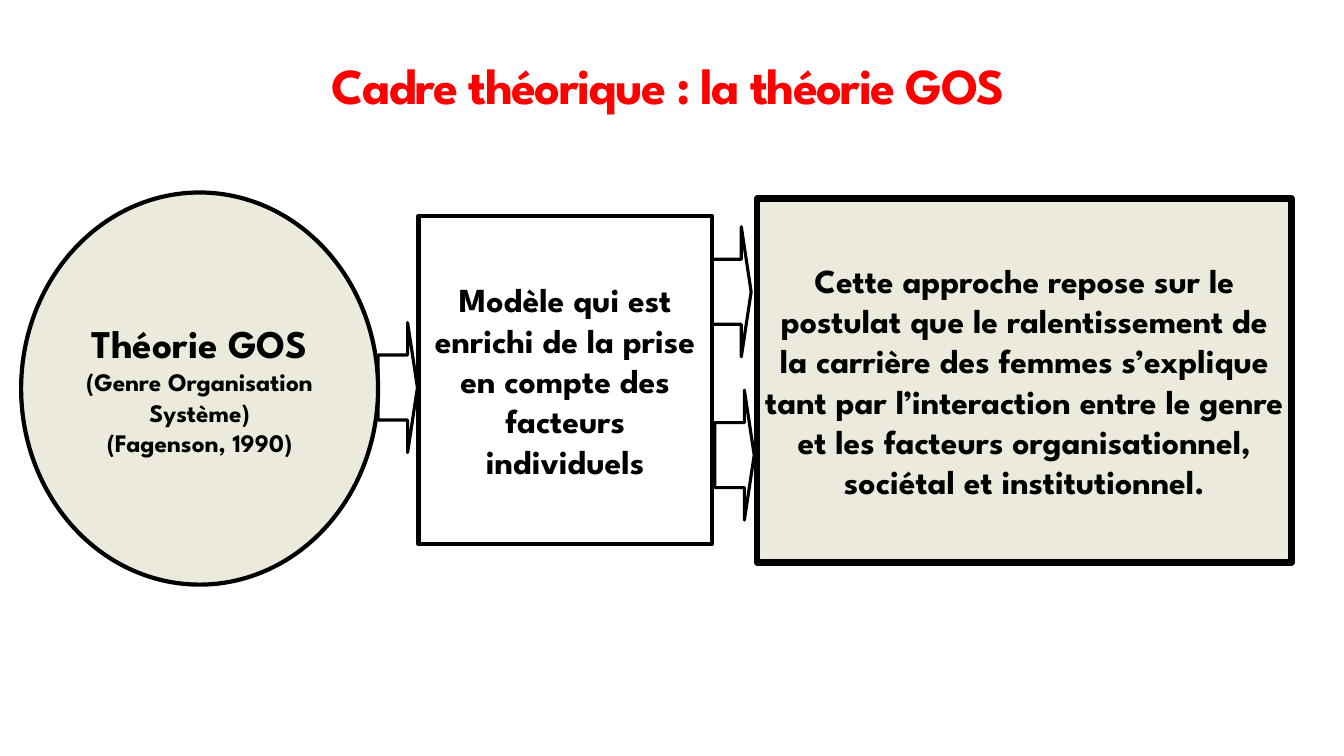
import pptx
import pptx.util
import pptx.dml.color
import pptx.enum.shapes
import pptx.enum.text

Inches = pptx.util.Inches
Pt = pptx.util.Pt
MSO_SHAPE = pptx.enum.shapes.MSO_SHAPE


def colour(hex_text):
    return pptx.dml.color.RGBColor.from_string(hex_text)


class TheorySlide:
    """Holds the style and the current slide, and draws its elements."""

    font = "League Spartan"
    ink = "000000"
    accent = "FF0000"
    beige = "ECEADC"

    def __init__(self, deck):
        self.slide = deck.slides.add_slide(deck.slide_layouts[5])

    def add_words(self, paragraph, text, size, hex_text):
        paragraph.alignment = pptx.enum.text.PP_ALIGN.CENTER
        run = paragraph.add_run()
        run.text = text
        run.font.name = self.font
        run.font.size = Pt(size)
        run.font.bold = True
        run.font.color.rgb = colour(hex_text)
        return run

    def heading(self, text, left, top, width, height):
        title = self.slide.shapes.title
        title.left, title.top = Inches(left), Inches(top)
        title.width, title.height = Inches(width), Inches(height)
        title.text_frame.vertical_anchor = pptx.enum.text.MSO_ANCHOR.MIDDLE
        paragraph = title.text_frame.paragraphs[0]
        paragraph.line_spacing = 0.85
        run = self.add_words(paragraph, text, 36, self.accent)
        run._r.get_or_add_rPr().set("spc", "-120")

    def outline(self, kind, left, top, width, height, weight, fill=None):
        shape = self.slide.shapes.add_shape(
            kind, Inches(left), Inches(top), Inches(width), Inches(height))
        shape.shadow.inherit = False
        if fill:
            shape.fill.solid()
            shape.fill.fore_color.rgb = colour(fill)
        else:
            shape.fill.background()
        shape.line.color.rgb = colour(self.ink)
        shape.line.width = Pt(weight)
        return shape

    def panel(self, kind, place, weight, paragraphs, fill=None, space_before=0):
        frame = self.outline(kind, *place, weight, fill).text_frame
        frame.word_wrap = True
        frame.vertical_anchor = pptx.enum.text.MSO_ANCHOR.MIDDLE
        frame.margin_left = frame.margin_right = Inches(0.07)
        frame.margin_top = frame.margin_bottom = Inches(0.03)
        for index, runs in enumerate(paragraphs):
            paragraph = frame.add_paragraph() if index else frame.paragraphs[0]
            paragraph.space_before = Pt(space_before)
            for text, size in runs:
                self.add_words(paragraph, text, size, self.ink)

    def arrow(self, left, top):
        arrow = self.outline(MSO_SHAPE.RIGHT_ARROW, left, top, 0.39, 1.29, 2.25)
        arrow.adjustments[0] = 0.5
        arrow.adjustments[1] = 0.25


def main():
    deck = pptx.Presentation()
    deck.slide_width, deck.slide_height = Inches(13.33), Inches(7.5)
    gos = TheorySlide(deck)
    gos.heading("Cadre théorique : la théorie GOS", 2.21, 0.29, 8.84, 1.18)
    gos.panel(
        MSO_SHAPE.OVAL, (0.21, 1.91, 3.54, 3.89), 3,
        [[("Théorie GOS ", 28), ("(Genre Organisation Système)", 18)],
         [("(Fagenson, 1990)", 18)]],
        fill=gos.beige)
    gos.panel(
        MSO_SHAPE.RECTANGLE, (7.51, 1.97, 5.3, 3.61), 4.5,
        [[("Cette approche repose sur le postulat que le ralentissement de la "
           "carrière des femmes s’explique tant par l’interaction entre le "
           "genre et les facteurs organisationnel, sociétal et "
           "institutionnel.", 24)]],
        fill=gos.beige, space_before=4.8)
    gos.panel(
        MSO_SHAPE.RECTANGLE, (4.15, 2.14, 2.91, 3.26), 3,
        [[("Modèle qui est enrichi de la prise en compte des facteurs "
           "individuels", 24)]])
    for left, top in ((3.75, 3.2), (7.06, 2.25), (7.09, 3.87)):
        gos.arrow(left, top)
    deck.save("out.pptx")


if __name__ == "__main__":
    main()
